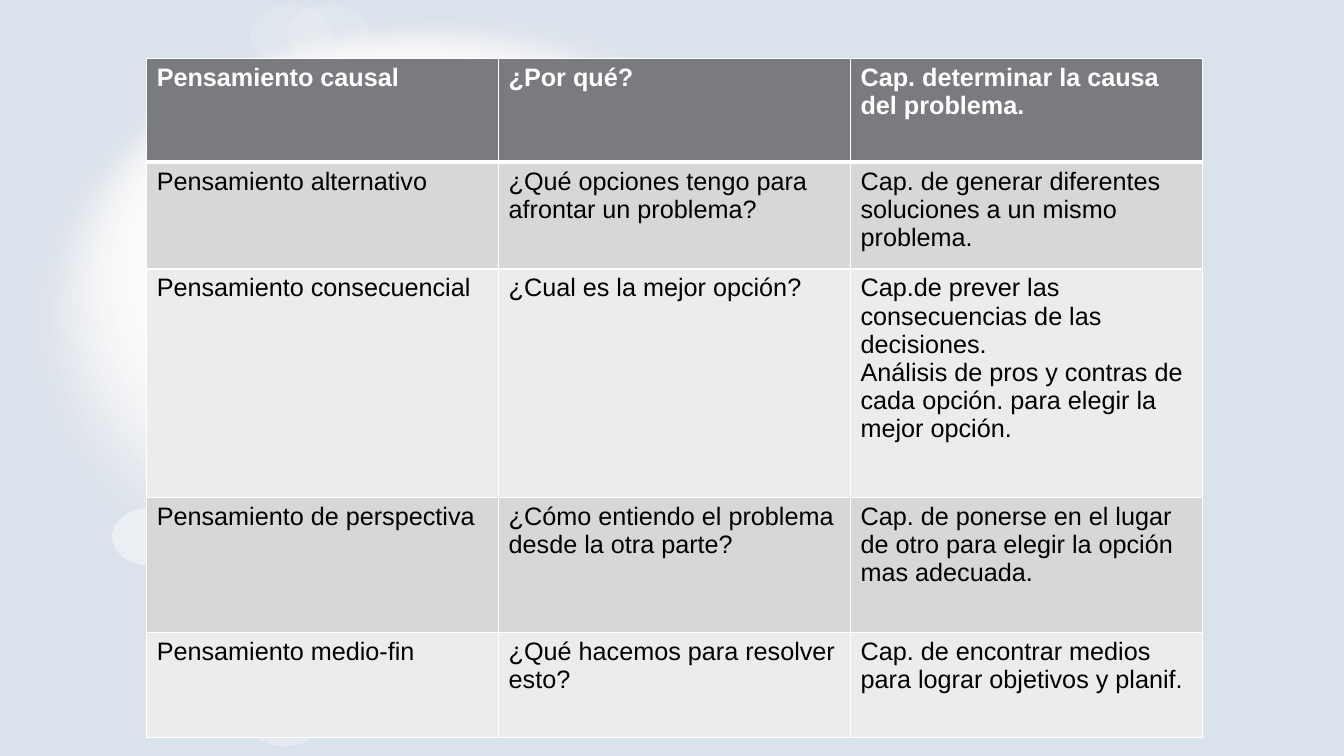
import dataclasses

import lxml.etree
import pptx
import pptx.dml.color
import pptx.enum.shapes
import pptx.oxml.ns
import pptx.util

Pt = pptx.util.Pt
qn = pptx.oxml.ns.qn


@dataclasses.dataclass
class Theme:
    font: str = "Arial"
    body_size: float = 18
    sky: str = "DAE2EB"
    white: str = "FFFFFF"
    text: str = "000000"
    header: str = "797B7E"
    bands: tuple = ("D7D7D8", "ECECEC")
    rule: float = 1
    header_rule: float = 3


class Deck:
    def __init__(self, prs, theme):
        self.theme = theme
        self.s = prs.slides.add_slide(prs.slide_layouts[6])

    def color(self, value):
        return pptx.dml.color.RGBColor.from_string(value)

    def paint(self, fill, value):
        fill.solid()
        fill.fore_color.rgb = self.color(value)

    def background(self):
        self.paint(self.s.background.fill, self.theme.sky)

    def bubble(self, left, top, width, height, opacity):
        sp = self.s.shapes.add_shape(
            pptx.enum.shapes.MSO_SHAPE.OVAL,
            Pt(left), Pt(top), Pt(width), Pt(height))
        sp.shadow.inherit = False
        sp.line.fill.background()
        self.paint(sp.fill, self.theme.white)
        clr = sp.element.spPr.find(".//" + qn("a:srgbClr"))
        alpha = lxml.etree.SubElement(clr, qn("a:alpha"))
        alpha.set("val", str(round(opacity * 1000)))

    def halo(self, outer, inner, opacities, rings):
        for i in range(rings):
            t = i / (rings - 1)
            box = [a + (b - a) * t for a, b in zip(outer, inner)]
            first, last = opacities
            self.bubble(*box, first + (last - first) * t)

    def borders(self, cell, bottom):
        tc_pr = cell._tc.get_or_add_tcPr()
        rule = self.theme.rule
        for side, width in (("L", rule), ("R", rule), ("T", rule), ("B", bottom)):
            ln = lxml.etree.SubElement(tc_pr, qn("a:ln" + side))
            ln.set("w", str(Pt(width)))
            solid = lxml.etree.SubElement(ln, qn("a:solidFill"))
            clr = lxml.etree.SubElement(solid, qn("a:srgbClr"))
            clr.set("val", self.theme.white)

    def cell(self, cell, text, fill, color, bold, bottom):
        self.borders(cell, bottom)
        self.paint(cell.fill, fill)
        tf = cell.text_frame
        tf.text = text
        for p in tf.paragraphs:
            for r in p.runs:
                r.font.name = self.theme.font
                r.font.size = Pt(self.theme.body_size)
                r.font.bold = bold
                r.font.color.rgb = self.color(color)

    def table(self, left, top, col_width, heights, rows):
        th = self.theme
        cols = len(rows[0])
        table = self.s.shapes.add_table(
            len(rows), cols, Pt(left), Pt(top),
            Pt(col_width * cols), Pt(sum(heights))).table
        for column in table.columns:
            column.width = Pt(col_width)
        for i, (height, texts) in enumerate(zip(heights, rows)):
            table.rows[i].height = Pt(height)
            if i == 0:
                look = (th.header, th.white, True, th.header_rule)
            else:
                look = (th.bands[(i - 1) % 2], th.text, False, th.rule)
            for j, text in enumerate(texts):
                self.cell(table.cell(i, j), text, *look)


THINKING_TYPES = [
    ("Pensamiento causal", "¿Por qué?",
     "Cap. determinar la causa del problema."),
    ("Pensamiento alternativo",
     "¿Qué opciones tengo para afrontar un problema?",
     "Cap. de generar diferentes soluciones a un mismo problema."),
    ("Pensamiento consecuencial", "¿Cual es la mejor opción?",
     "Cap.de prever las consecuencias de las decisiones.\n"
     "Análisis de pros y contras de cada opción. para elegir la mejor opción."),
    ("Pensamiento de perspectiva",
     "¿Cómo entiendo el problema desde la otra parte?",
     "Cap. de ponerse en el lugar de otro para elegir la opción mas adecuada."),
    ("Pensamiento medio-fin", "¿Qué hacemos para resolver esto?",
     "Cap. de encontrar medios para lograr objetivos y planif."),
]

BUBBLES = [
    (80, 363, 54, 41, 45),
    (176.5, 492, 54, 41, 31),
    (205.5, 3, 59, 44.5, 15),
    (178.5, 3, 59, 44.5, 16),
]


def main():
    prs = pptx.Presentation()
    prs.slide_width, prs.slide_height = Pt(960), Pt(540)
    deck = Deck(prs, Theme())
    deck.background()
    deck.halo((19.4, 10.3, 599, 450.7), (92.2, 44, 388, 291.6), (3, 27), 17)
    for bubble in BUBBLES:
        deck.bubble(*bubble)
    deck.table(104.8, 41.6, 251.4, (74.2, 76.3, 163.2, 96.4, 75), THINKING_TYPES)
    prs.save("out.pptx")


if __name__ == "__main__":
    main()
